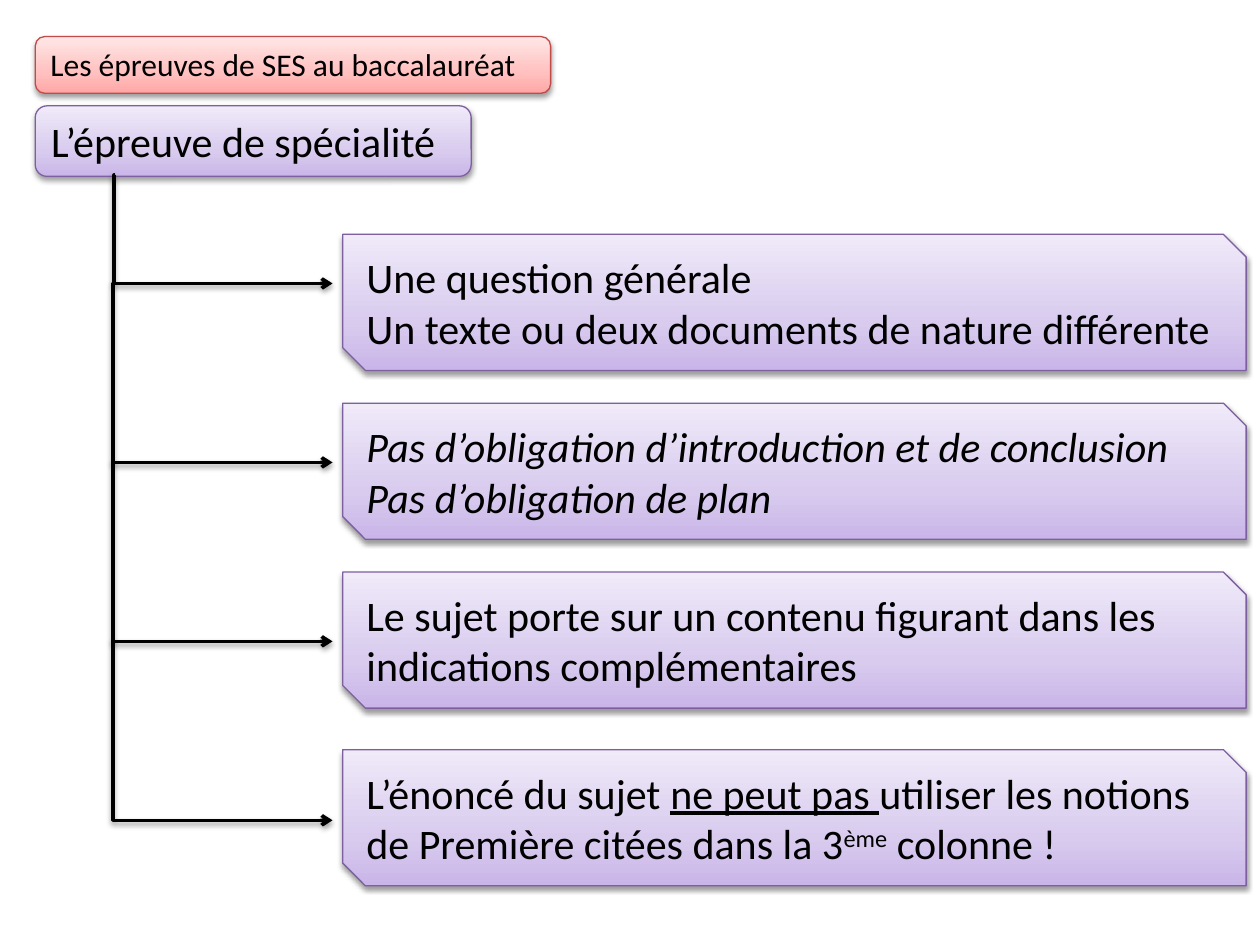
import copy

import pptx
import pptx.dml.color
import pptx.enum.dml
import pptx.enum.shapes
import pptx.enum.text
import pptx.oxml
import pptx.oxml.ns
import pptx.util

Inches = pptx.util.Inches
Pt = pptx.util.Pt
RGB = pptx.dml.color.RGBColor.from_string
KIND = pptx.enum.shapes.MSO_SHAPE
qn = pptx.oxml.ns.qn

COLORS = {
    "text": "000000",
    "red": ["FFA6A5", "FFC0BF", "FFE7E7"],
    "red edge": "BF4C48",
    "plum": ["C9B5E8", "D8CBEE", "F0EAF9"],
    "plum edge": "7D60A0",
}
STOPS = [0, 0.35, 1]
SHADE = (
    f'<a:effectLst {pptx.oxml.ns.nsdecls("a")}>'
    '<a:outerShdw blurRad="40000" dist="20000" dir="5400000" rotWithShape="0">'
    '<a:srgbClr val="000000"><a:alpha val="38000"/></a:srgbClr>'
    '</a:outerShdw></a:effectLst>'
)


def write(para, text, size=24, italic=False, under=False, base=0):
    """Add one run to the paragraph; base is the superscript rise in percent."""
    run = para.add_run()
    run.text = text
    font = run.font
    font.name, font.size = "Calibri", Pt(size)
    font.color.rgb = RGB(COLORS["text"])
    font.italic, font.underline = italic, under
    if base:
        font._element.set("baseline", str(base * 1000))


deck = pptx.Presentation()
deck.slide_width, deck.slide_height = Inches(10), Inches(7.5)
slide = deck.slides.add_slide(deck.slide_layouts[6])

# Each box: preset, place, colour, size, then paragraphs made of (text, format) runs
left, wide, high = 2.72, 7.17, 1.08
snip = KIND.SNIP_2_DIAG_RECTANGLE
boxes = [
    (KIND.ROUNDED_RECTANGLE, (0.28, 0.29, 4.09, 0.45), "red", 18,
     [[("Les épreuves de SES au baccalauréat", {})]]),
    (KIND.ROUNDED_RECTANGLE, (0.28, 0.84, 3.46, 0.56), "plum", 24,
     [[("L’épreuve de spécialité", {})]]),
    (snip, (left, 1.86, wide, high), "plum", 24,
     [[("Une question générale", {})],
      [("Un texte ou deux documents de nature différente", {})]]),
    (snip, (left, 3.2, wide, high), "plum", 24,
     [[("Pas d’obligation d’introduction et de conclusion", {"italic": True})],
      [("Pas d’obligation de plan", {"italic": True})]]),
    (snip, (left, 4.54, wide, high), "plum", 24,
     [[("Le sujet porte sur un contenu figurant dans les "
        "indications complémentaires", {})]]),
    (snip, (left, 5.95, wide, high), "plum", 24,
     [[("L’énoncé du sujet ", {}),
       ("ne peut pas ", {"under": True}),
       ("utiliser les notions de Première citées dans la 3", {}),
       ("ème", {"base": 30}),
       (" colonne !", {})]]),
]

for kind, place, tint, size, paras in boxes:
    box = slide.shapes.add_shape(kind, *map(Inches, place))
    box.fill.gradient()
    box.fill.gradient_angle = 90
    stops = box._element.spPr.find(".//" + qn("a:gsLst"))
    stops.append(copy.deepcopy(stops[-1]))
    for stop, spot, color in zip(box.fill.gradient_stops, STOPS, COLORS[tint]):
        stop.position = spot
        stop.color.rgb = RGB(color)
    box.line.color.rgb = RGB(COLORS[tint + " edge"])
    box.line.width = Pt(0.75)
    box._element.spPr.append(pptx.oxml.parse_xml(SHADE))

    frame = box.text_frame
    frame.word_wrap = True
    frame.auto_size = pptx.enum.text.MSO_AUTO_SIZE.SHAPE_TO_FIT_TEXT
    frame.vertical_anchor = pptx.enum.text.MSO_ANCHOR.TOP
    for index, runs in enumerate(paras):
        para = frame.add_paragraph() if index else frame.paragraphs[0]
        para.alignment = pptx.enum.text.PP_ALIGN.LEFT
        for text, form in runs:
            write(para, text, size=size, **form)

# Elbow arrows: each starts where the one above turns
start, end = 0.91, 2.64
levels = [1.39] + [2.25 + 1.42 * step for step in range(4)]
for index, (top, low) in enumerate(zip(levels, levels[1:])):
    arrow = slide.shapes.add_connector(
        pptx.enum.shapes.MSO_CONNECTOR.ELBOW,
        Inches(start), Inches(top), Inches(end), Inches(low))
    arrow.line.color.rgb = RGB(COLORS["text"])
    arrow.line.width = Pt(2)
    shape = arrow._element.spPr
    bend = pptx.oxml.parse_xml(
        f'<a:gd {pptx.oxml.ns.nsdecls("a")} name="adj1" '
        f'fmla="val {-800 if index else -200}"/>')
    shape.find(".//" + qn("a:avLst")).append(bend)
    tip = pptx.oxml.parse_xml(
        f'<a:tailEnd {pptx.oxml.ns.nsdecls("a")} type="arrow"/>')
    shape.find(qn("a:ln")).append(tip)
    shape.append(pptx.oxml.parse_xml(SHADE))

deck.save("out.pptx")
